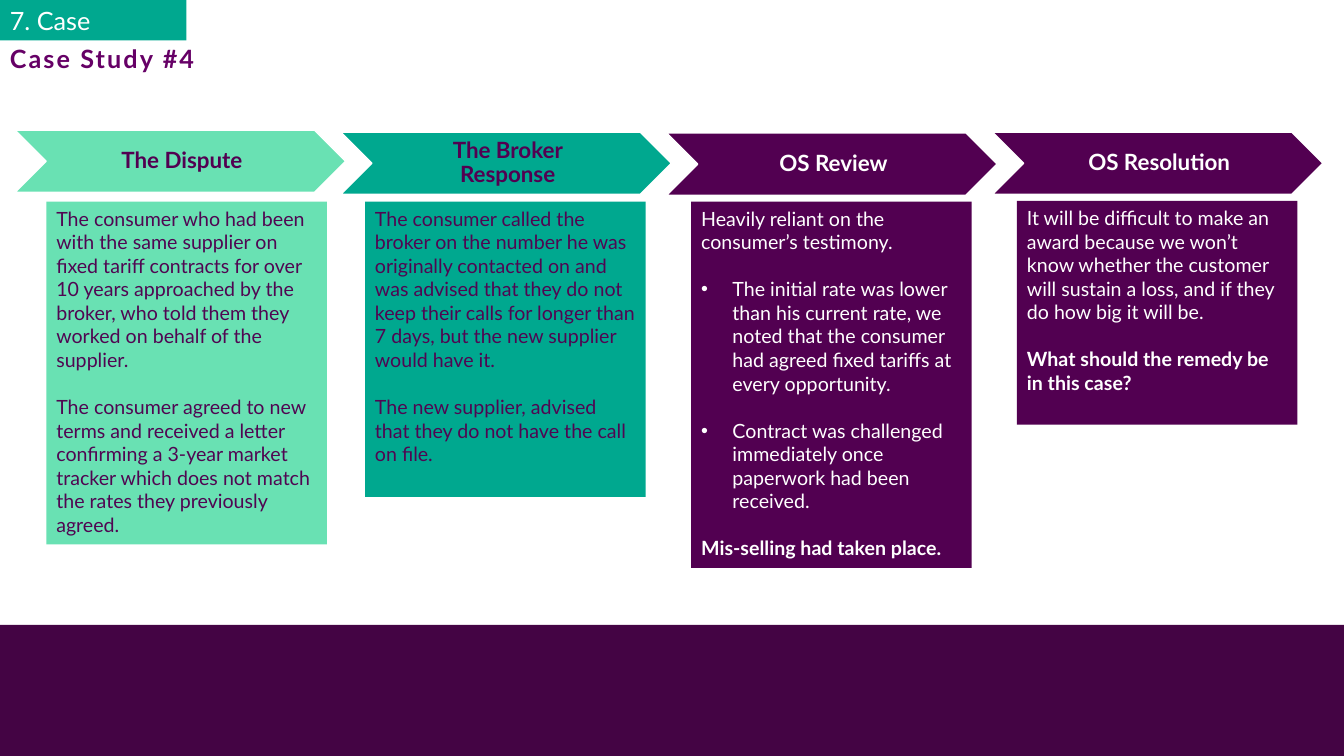
from dataclasses import dataclass

from lxml import etree
from pptx import Presentation
from pptx.dml.color import RGBColor
from pptx.enum.shapes import MSO_SHAPE
from pptx.enum.text import MSO_ANCHOR, PP_ALIGN
from pptx.oxml.ns import qn
from pptx.util import Cm, Pt

RECTANGLE, CHEVRON = MSO_SHAPE.RECTANGLE, MSO_SHAPE.CHEVRON
TOP, MIDDLE = MSO_ANCHOR.TOP, MSO_ANCHOR.MIDDLE
LEFT, CENTER = PP_ALIGN.LEFT, PP_ALIGN.CENTER


@dataclass(frozen=True)
class Theme:
    font: str = "Lato"
    white: str = "FFFFFF"
    mint: str = "69E1B3"
    teal: str = "00A88F"
    plum: str = "520051"
    body_plum: str = "500652"
    title_plum: str = "660066"
    footer_plum: str = "440444"
    title_size: int = 18
    heading_size: int = 16
    body_size: int = 14
    body_gap: float = 16.8


THEME = Theme()

SLIDE_WIDTH, SLIDE_HEIGHT = 33.87, 19.05
STEP_LEFT, STEP_PITCH = 0.38, 8.21
CHEVRON_WIDTH, CHEVRON_HEIGHT = 8.33, 1.57
LABEL_OFFSET, LABEL_WIDTH = 1.67, 5.0
LABEL_MARGINS = (0.1, 0.03, 0.03, 0.03)
DETAIL_WIDTH = 7.07
BULLET_INDENT = 0.79

# Each detail paragraph is (text, style), the style being "plain", "bullet" or "bold".
STEPS = [
    {
        "heading": "The Dispute", "fill": THEME.mint,
        "heading_color": THEME.plum, "body_color": THEME.body_plum,
        "chevron_top": 3.28, "detail": (1.17, 5.08, 8.64),
        "paragraphs": [
            ("The consumer who had been with the same supplier on fixed tariff contracts for over "
             "10 years approached by the broker, who told them they worked on behalf of the "
             "supplier.", "plain"),
            ("The consumer agreed to new terms and received a letter confirming a 3-year market "
             "tracker which does not match the rates they previously agreed.", "plain"),
        ],
    },
    {
        "heading": "The Broker Response", "fill": THEME.teal,
        "heading_color": THEME.plum, "body_color": THEME.body_plum,
        "chevron_top": 3.33, "detail": (9.2, 5.08, 7.44),
        "paragraphs": [
            ("The consumer called the broker on the number he was originally contacted on and was "
             "advised that they do not keep their calls for longer than 7 days, but the new "
             "supplier would have it.", "plain"),
            ("The new supplier, advised that they do not have the call on file.", "plain"),
        ],
    },
    {
        "heading": "OS Review", "fill": THEME.plum,
        "heading_color": THEME.white, "body_color": THEME.white,
        "chevron_top": 3.35, "detail": (17.42, 5.08, 9.23),
        "paragraphs": [
            ("Heavily reliant on the consumer’s testimony.", "plain"),
            ("The initial rate was lower than his current rate, we noted that the consumer had "
             "agreed fixed tariffs at every opportunity.", "bullet"),
            ("Contract was challenged immediately once paperwork had been received.", "bullet"),
            ("Mis-selling had taken place.", "bold"),
        ],
    },
    {
        "heading": "OS Resolution", "fill": THEME.plum,
        "heading_color": THEME.white, "body_color": THEME.white,
        "chevron_top": 3.33, "detail": (25.63, 5.06, 5.64),
        "paragraphs": [
            ("It will be difficult to make an award because we won’t know whether the customer "
             "will sustain a loss, and if they do how big it will be.", "plain"),
            ("What should the remedy be in this case?", "bold"),
        ],
    },
]


def set_attributes(target, values):
    for name, value in values.items():
        setattr(target, name, value)


def add_block(slide, kind, box, fill, outline=None):
    shape = slide.shapes.add_shape(kind, *map(Cm, box))
    shape.shadow.inherit = False
    shape.fill.solid()
    shape.fill.fore_color.rgb = RGBColor.from_string(fill)
    if outline:
        shape.line.color.rgb = RGBColor.from_string(outline)
        shape.line.width = Pt(1)
    else:
        shape.line.fill.background()
    return shape


def set_frame(shape, anchor, margins=(0.25, 0.13, 0.25, 0.13)):
    """Wrap and anchor the text; margins run left, top, right, bottom."""
    frame = shape.text_frame
    sides = ("margin_left", "margin_top", "margin_right", "margin_bottom")
    set_attributes(frame, {"word_wrap": True, "vertical_anchor": anchor,
                           **dict(zip(sides, map(Cm, margins)))})
    return frame


def write(paragraph, text, size, color, bold=False, **layout):
    set_attributes(paragraph, {"alignment": LEFT, **layout})
    run = paragraph.add_run()
    run.text = text
    set_attributes(run.font, {"name": THEME.font, "size": Pt(size), "bold": bold})
    run.font.color.rgb = RGBColor.from_string(color)
    return run


def add_bullet(paragraph):
    indent = Cm(BULLET_INDENT)
    properties = paragraph._p.get_or_add_pPr()
    properties.set("marL", str(indent))
    properties.set("indent", str(-indent))
    etree.SubElement(properties, qn("a:buFont")).set("typeface", "Arial")
    etree.SubElement(properties, qn("a:buChar")).set("char", "•")


def add_step_heading(slide, index, step):
    left, top = STEP_LEFT + index * STEP_PITCH, step["chevron_top"]
    add_block(slide, CHEVRON, (left, top, CHEVRON_WIDTH, CHEVRON_HEIGHT),
              step["fill"], THEME.white)
    label = slide.shapes.add_textbox(
        *map(Cm, (left + LABEL_OFFSET, top, LABEL_WIDTH, CHEVRON_HEIGHT)))
    frame = set_frame(label, MIDDLE, LABEL_MARGINS)
    write(frame.paragraphs[0], step["heading"], THEME.heading_size, step["heading_color"],
          bold=True, alignment=CENTER, line_spacing=0.9)


def add_step_detail(slide, step):
    left, top, height = step["detail"]
    shape = add_block(slide, RECTANGLE, (left, top, DETAIL_WIDTH, height), step["fill"])
    frame = set_frame(shape, TOP)
    for position, (text, style) in enumerate(step["paragraphs"]):
        paragraph = frame.add_paragraph() if position else frame.paragraphs[0]
        layout = {"space_before": Pt(THEME.body_gap)} if position else {}
        if style == "bullet":
            add_bullet(paragraph)
        write(paragraph, text, THEME.body_size, step["body_color"],
              bold=style == "bold", **layout)


def add_section_tag(slide, text):
    shape = add_block(slide, RECTANGLE, (0, 0, 4.7, 1.02), THEME.teal)
    frame = set_frame(shape, TOP)
    write(frame.paragraphs[0], text, THEME.title_size, THEME.white)


def add_title(slide, text):
    box = slide.shapes.add_textbox(*map(Cm, (0, 0.64, 7.01, 1.75)))
    frame = set_frame(box, MIDDLE)
    run = write(frame.paragraphs[0], text, THEME.title_size, THEME.title_plum,
                bold=True, line_spacing=0.9)
    run._r.get_or_add_rPr().set("spc", "150")


def main():
    presentation = Presentation()
    set_attributes(presentation, {"slide_width": Cm(SLIDE_WIDTH),
                                  "slide_height": Cm(SLIDE_HEIGHT)})
    slide = presentation.slides.add_slide(presentation.slide_layouts[6])
    add_section_tag(slide, "7. Case")
    add_block(slide, RECTANGLE, (0, 15.75, SLIDE_WIDTH, 3.3), THEME.footer_plum)
    for index, step in enumerate(STEPS):
        add_step_detail(slide, step)
        add_step_heading(slide, index, step)
    add_title(slide, "Case Study #4")
    presentation.save("out.pptx")


if __name__ == "__main__":
    main()
